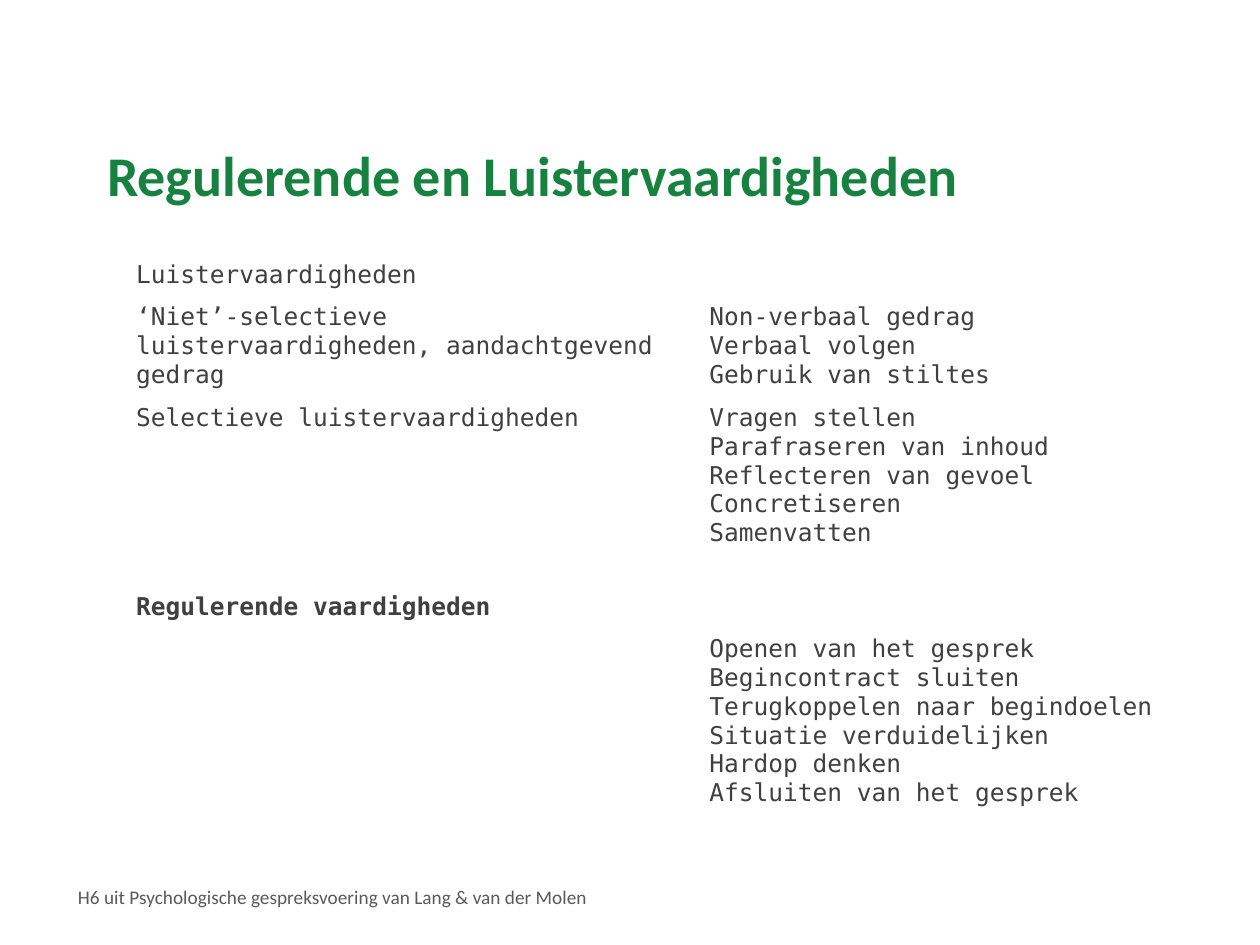
from dataclasses import dataclass

import pptx
import pptx.dml.color
import pptx.enum.text
import pptx.util

GREEN = pptx.dml.color.RGBColor(0x17, 0x82, 0x40)
DARK_GREY = pptx.dml.color.RGBColor(0x40, 0x40, 0x40)
MID_GREY = pptx.dml.color.RGBColor(0x59, 0x59, 0x59)

SLIDE_WIDTH = pptx.util.Inches(10)
SLIDE_HEIGHT = pptx.util.Inches(7.5)
COLUMN_WIDTHS = (4.55, 3.87)
TABLE_SIZE = 14


@dataclass(frozen=True)
class SkillRow:
    height: float
    group: str = ""
    skills: str = ""
    bold: bool = False


# "\n" starts a paragraph, "\v" breaks a line within one.
SKILL_ROWS = (
    SkillRow(0.33, "Luistervaardigheden"),
    SkillRow(
        0.8,
        "‘Niet’-selectieve luistervaardigheden, aandachtgevend gedrag",
        "Non-verbaal gedrag\vVerbaal volgen\vGebruik van stiltes",
    ),
    SkillRow(
        1.5,
        "Selectieve luistervaardigheden",
        "Vragen stellen\nParafraseren van inhoud\nReflecteren van gevoel\n"
        "Concretiseren\nSamenvatten",
    ),
    SkillRow(0.33, "Regulerende vaardigheden", bold=True),
    SkillRow(
        1.5,
        "",
        "Openen van het gesprek\nBegincontract sluiten\n"
        "Terugkoppelen naar begindoelen\nSituatie verduidelijken\n"
        "Hardop denken\nAfsluiten van het gesprek",
    ),
)


def format_text(frame, font_name: str, size: float,
                color: pptx.dml.color.RGBColor, bold: bool = False) -> None:
    for para in frame.paragraphs:
        para.alignment = pptx.enum.text.PP_ALIGN.LEFT
        para.font.name = font_name
        para.font.size = pptx.util.Pt(size)
        para.font.bold = bold
        para.font.color.rgb = color


def add_title(page, text: str) -> None:
    title = page.shapes.title
    title.left, title.top = int(SLIDE_WIDTH * 0.075), pptx.util.Inches(1.07)
    title.width, title.height = int(SLIDE_WIDTH * 0.85), pptx.util.Inches(0.63)
    frame = title.text_frame
    frame.text = text
    frame.vertical_anchor = pptx.enum.text.MSO_ANCHOR.MIDDLE
    frame.auto_size = pptx.enum.text.MSO_AUTO_SIZE.NONE
    format_text(frame, "Calibri", 32, GREEN, bold=True)


def add_source_note(page, text: str) -> None:
    box = page.shapes.add_textbox(
        pptx.util.Inches(0.52), pptx.util.Inches(6.98),
        int(SLIDE_WIDTH * 0.85), pptx.util.Inches(0.63))
    box.text_frame.word_wrap = True
    box.text_frame.text = text
    format_text(box.text_frame, "Calibri", 11, MID_GREY)


def fill_cell(cell, text: str, bold: bool) -> None:
    cell.fill.background()
    cell.text_frame.text = text
    format_text(cell.text_frame, "DejaVu Sans Mono", TABLE_SIZE, DARK_GREY, bold)
    if not text:
        # An empty cell takes its line height from the paragraph end mark.
        end_mark = cell.text_frame.paragraphs[0]._p.get_or_add_endParaRPr()
        end_mark.set("sz", str(TABLE_SIZE * 100))


def add_skill_table(page) -> None:
    frame = page.shapes.add_table(
        len(SKILL_ROWS), len(COLUMN_WIDTHS),
        pptx.util.Inches(0.98), pptx.util.Inches(2.02),
        pptx.util.Inches(sum(COLUMN_WIDTHS)),
        pptx.util.Inches(sum(row.height for row in SKILL_ROWS)))
    table = frame.table
    table.first_row = False
    table.horz_banding = False
    for column, width in zip(table.columns, COLUMN_WIDTHS):
        column.width = pptx.util.Inches(width)
    for table_row, row in zip(table.rows, SKILL_ROWS):
        table_row.height = pptx.util.Inches(row.height)
        for cell, text in zip(table_row.cells, (row.group, row.skills)):
            fill_cell(cell, text, row.bold)


def main() -> None:
    deck = pptx.Presentation()
    deck.slide_width, deck.slide_height = SLIDE_WIDTH, SLIDE_HEIGHT
    page = deck.slides.add_slide(deck.slide_layouts.get_by_name("Title Only"))
    add_source_note(
        page, "H6 uit Psychologische gespreksvoering van Lang & van der Molen")
    add_title(page, "Regulerende en Luistervaardigheden")
    add_skill_table(page)
    deck.save("out.pptx")


if __name__ == "__main__":
    main()
